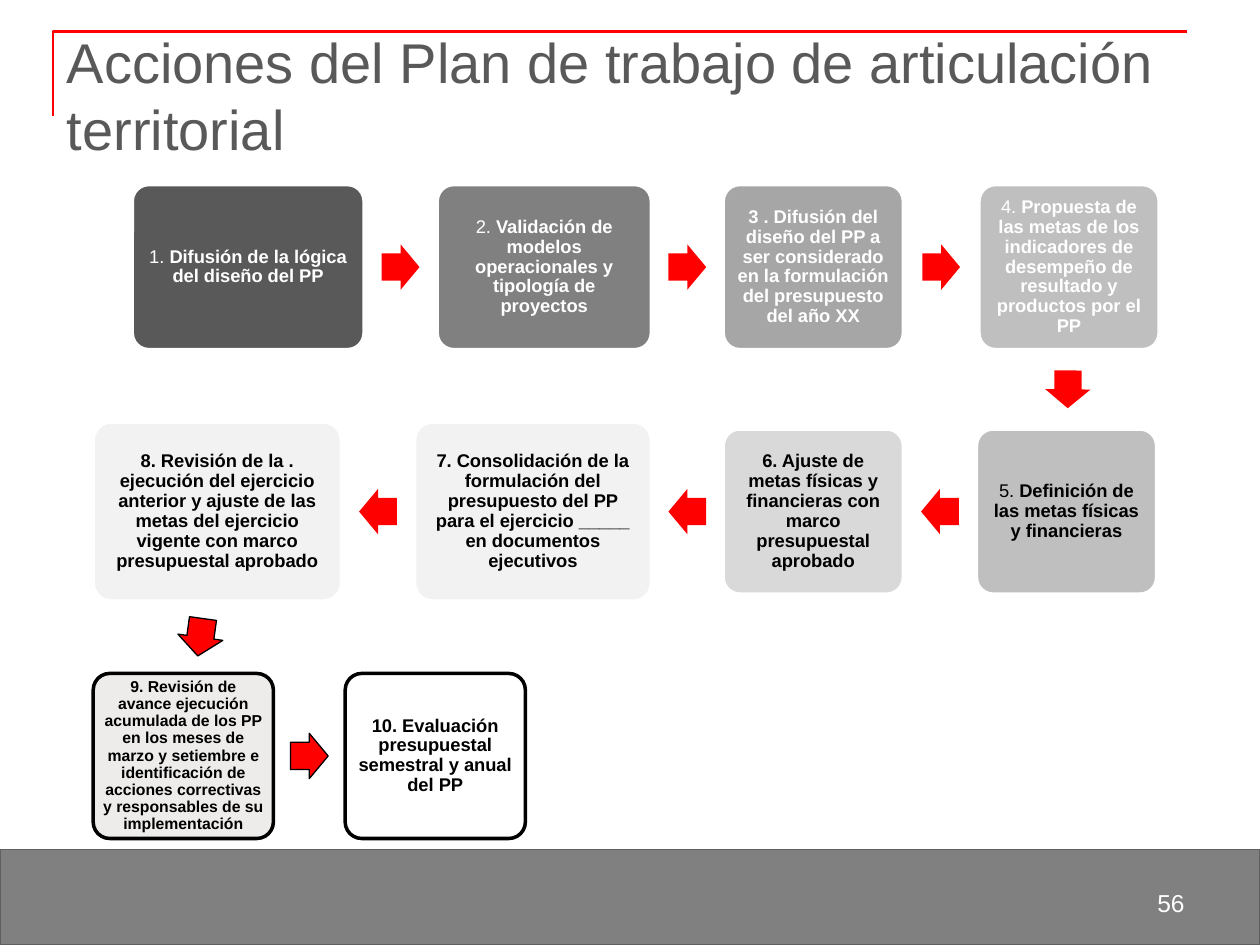
"""Build the slide on the action plan for territorial coordination."""
from math import atan2, degrees

from pptx import Presentation
from pptx.dml.color import RGBColor
from pptx.enum.shapes import MSO_SHAPE as Shape
from pptx.enum.text import MSO_ANCHOR as Anchor, MSO_AUTO_SIZE as Fit, PP_ALIGN as Align
from pptx.util import Inches, Pt

INK = {
    "white": "FFFFFF", "black": "000000", "red": "FF0000", "edge": "5F5F5F",
    "dark": "595959", "gray": "808080", "mid": "A6A6A6", "soft": "BFBFBF",
    "pale": "D9D9D9", "light": "F2F2F2", "warm": "EDECEB",
}

STEPS = [
    (0, 1.05, 1.84, 1.31, "dark", "white", "1. ", "Difusión de la lógica del diseño del PP"),
    (0, 3.47, 1.7, 1.31, "gray", "white", "2. ",
     "Validación de modelos operacionales y tipología de proyectos"),
    (0, 5.74, 1.43, 1.31, "mid", "white", "",
     "3 . Difusión del diseño del PP a ser considerado en la formulación "
     "del presupuesto del año XX"),
    (0, 7.77, 1.43, 1.31, "soft", "white", "4. ",
     "Propuesta de las metas de los indicadores de desempeño de resultado "
     "y productos por el PP"),
    (1, 7.75, 1.43, 1.31, "soft", "black", "5. ",
     "Definición de las metas físicas y financieras"),
    (1, 5.74, 1.43, 1.31, "pale", "black", "",
     "6. Ajuste de metas físicas y financieras con marco presupuestal aprobado"),
    (1, 3.29, 1.88, 1.42, "light", "black", "",
     "7. Consolidación de la formulación del presupuesto del PP para el "
     "ejercicio _____ en documentos ejecutivos"),
    (1, 0.74, 1.97, 1.42, "light", "black", "",
     "8. Revisión de la . ejecución del ejercicio anterior y ajuste de las "
     "metas del ejercicio vigente con marco presupuestal aprobado"),
    (2, 0.74, 1.43, 1.31, "warm", "black", "",
     "9. Revisión de avance ejecución acumulada de los PP en los meses de "
     "marzo y setiembre e identificación de acciones correctivas y "
     "responsables de su implementación"),
    (2, 2.74, 1.43, 1.31, "white", "black", "",
     "10. Evaluación presupuestal semestral y anual del PP"),
]


def paint(shape, fill, line=None, width=0.75):
    shape.shadow.inherit = False
    if fill:
        shape.fill.solid()
        shape.fill.fore_color.rgb = RGBColor.from_string(INK[fill])
    else:
        shape.fill.background()
    if line:
        shape.line.color.rgb = RGBColor.from_string(INK[line])
        shape.line.width = Pt(width)
    else:
        shape.line.fill.background()


def style(run, size, color, bold=False):
    run.font.name = "Arial"
    run.font.size = Pt(size)
    run.font.bold = bold
    run.font.color.rgb = RGBColor.from_string(INK[color])


deck = Presentation()
deck.slide_width, deck.slide_height = Inches(10), Inches(7.5)
slide = deck.slides.add_slide(deck.slide_layouts[5])
shapes = slide.shapes

band = shapes.add_shape(Shape.RECTANGLE, Inches(0), Inches(6.74), Inches(10), Inches(0.76))
paint(band, "gray", "edge")

pen = shapes.build_freeform(Inches(0.42), Inches(0.92))
pen.add_line_segments([(Inches(0.42), Inches(0.25)), (Inches(9.42), Inches(0.25))], close=False)
paint(pen.convert_to_shape(), None, "red", 1.5)

for row, left, wide, high, fill, color, lead, text in STEPS:
    mid = 2.12 + 1.94 * row
    box = shapes.add_shape(Shape.ROUNDED_RECTANGLE, Inches(left), Inches(mid - high / 2),
                           Inches(wide), Inches(high))
    box.adjustments[0] = 0.1
    paint(box, fill, "black" if row == 2 else "white", 2)
    small = text.startswith("9.")
    frame = box.text_frame
    frame.word_wrap = True
    frame.vertical_anchor = Anchor.MIDDLE
    pad = Inches(0.04 if small else 0.05)
    frame.margin_left = frame.margin_right = frame.margin_top = frame.margin_bottom = pad
    para = frame.paragraphs[0]
    para.alignment = Align.CENTER
    para.line_spacing = 0.9
    for part, bold in ((lead, False), (text, True)):
        if part:
            run = para.add_run()
            run.text = part
            style(run, 9 if small else 10.5, color, bold)

for start, end in zip(STEPS, STEPS[1:]):
    (row, left, wide, high), (row2, left2, wide2, high2) = start[:4], end[:4]
    x, x2 = left + wide / 2, left2 + wide2 / 2
    y, y2 = 2.12 + 1.94 * row, 2.12 + 1.94 * row2
    if row == row2:
        side = 1 if x2 > x else -1
        mid_x, mid_y = (x + x2 + side * (wide - wide2) / 2) / 2, y
    else:
        mid_x, mid_y = (x + x2) / 2, (y + y2 + (high - high2) / 2) / 2
    arrow = shapes.add_shape(Shape.RIGHT_ARROW, Inches(mid_x - 0.15), Inches(mid_y - 0.18),
                             Inches(0.3), Inches(0.36))
    arrow.adjustments[0], arrow.adjustments[1] = 0.6, 0.5
    arrow.rotation = degrees(atan2(y2 - y, x2 - x))
    paint(arrow, "red", "black" if row2 == 2 else None)

page = shapes.add_textbox(Inches(7.17), Inches(6.83), Inches(2.33), Inches(0.5))
frame = page.text_frame
frame.word_wrap = True
frame.vertical_anchor = Anchor.BOTTOM
frame.text = "56"
frame.paragraphs[0].alignment = Align.RIGHT
style(frame.paragraphs[0].runs[0], 14, "white")

title = shapes.title
title.left, title.top = Inches(0.43), Inches(0.28)
title.width, title.height = Inches(9.29), Inches(0.94)
frame = title.text_frame
frame.text = "Acciones del Plan de trabajo de articulación territorial"
frame.word_wrap = True
frame.auto_size = Fit.NONE
frame.vertical_anchor = Anchor.MIDDLE
frame.paragraphs[0].alignment = Align.LEFT
style(frame.paragraphs[0].runs[0], 32, "dark")

deck.save("out.pptx")
